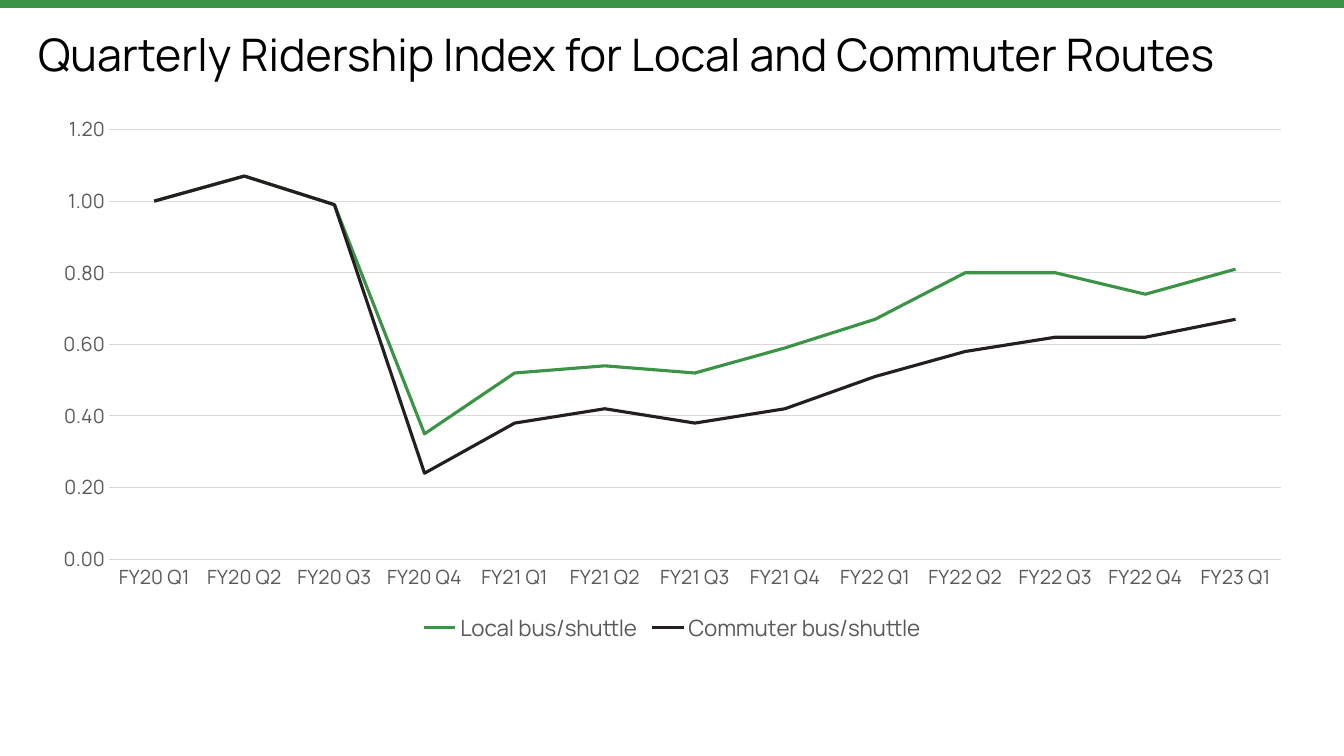
"""Builds a slide with a line chart of quarterly bus ridership."""
import pptx
import pptx.chart.data
import pptx.dml.color
import pptx.enum.chart
import pptx.enum.shapes
import pptx.enum.text
import pptx.util

TITLE = "Quarterly Ridership Index for Local and Commuter Routes"
GREEN = pptx.dml.color.RGBColor(0x3B, 0x93, 0x45)
CHARCOAL = pptx.dml.color.RGBColor(0x23, 0x1F, 0x20)
BLACK = pptx.dml.color.RGBColor(0x00, 0x00, 0x00)
GRAY = pptx.dml.color.RGBColor(0x59, 0x59, 0x59)
GRID = pptx.dml.color.RGBColor(0xD9, 0xD9, 0xD9)
FONT = "Manrope"

QUARTERS = [f"FY{20 + i // 4} Q{i % 4 + 1}" for i in range(13)]
RIDERSHIP = [
    ("Local bus/shuttle", GREEN,
     (1, 1.07, 0.99, 0.35, 0.52, 0.54, 0.52, 0.59, 0.67, 0.8, 0.8, 0.74, 0.81)),
    ("Commuter bus/shuttle", CHARCOAL,
     (1, 1.07, 0.99, 0.24, 0.38, 0.42, 0.38, 0.42, 0.51, 0.58, 0.62, 0.62, 0.67)),
]

PAGE_SIZE = (1344, 756)
BAND_BOX = (0, 0, 1344, 8)
TITLE_BOX = (38, 33, 1268, 48)
CHART_BOX = (38, 105, 1268, 542)
EMU_PER_PX = 914400 / 100.8


def emu(lengths):
    return [pptx.util.Emu(round(length * EMU_PER_PX)) for length in lengths]


def style_font(font, size, color):
    font.name = FONT
    font.size = pptx.util.Pt(size)
    font.color.rgb = color


def style_line(line, color, width):
    line.color.rgb = color
    line.width = pptx.util.Pt(width)


def add_band(page):
    band = page.shapes.add_shape(pptx.enum.shapes.MSO_SHAPE.RECTANGLE, *emu(BAND_BOX))
    band.shadow.inherit = False
    band.fill.solid()
    band.fill.fore_color.rgb = GREEN
    band.line.fill.background()


def fill_title(page):
    title = page.shapes.title
    title.left, title.top, title.width, title.height = emu(TITLE_BOX)
    frame = title.text_frame
    frame.margin_left = frame.margin_top = frame.margin_right = frame.margin_bottom = 0
    frame.auto_size = pptx.enum.text.MSO_AUTO_SIZE.SHAPE_TO_FIT_TEXT
    frame.text = TITLE
    para = frame.paragraphs[0]
    para.alignment = pptx.enum.text.PP_ALIGN.LEFT
    para.line_spacing = 0.9
    style_font(para.font, 32, BLACK)


def add_ridership_chart(page):
    data = pptx.chart.data.CategoryChartData()
    data.categories = QUARTERS
    for name, _, values in RIDERSHIP:
        data.add_series(name, values)
    chart = page.shapes.add_chart(
        pptx.enum.chart.XL_CHART_TYPE.LINE, *emu(CHART_BOX), data).chart
    style_font(chart.font, 10, BLACK)
    chart.has_title = False
    chart.has_legend = True
    chart.legend.position = pptx.enum.chart.XL_LEGEND_POSITION.BOTTOM
    chart.legend.include_in_layout = False
    style_font(chart.legend.font, 16, GRAY)

    for axis in (chart.category_axis, chart.value_axis):
        axis.major_tick_mark = pptx.enum.chart.XL_TICK_MARK.NONE
        axis.minor_tick_mark = pptx.enum.chart.XL_TICK_MARK.NONE
        style_font(axis.tick_labels.font, 14, GRAY)
    style_line(chart.category_axis.format.line, GRID, 0.75)
    scale = chart.value_axis
    scale.minimum_scale, scale.maximum_scale, scale.major_unit = 0, 1.2, 0.2
    scale.tick_labels.number_format = "#,##0.00"
    scale.tick_labels.number_format_is_linked = False
    scale.format.line.fill.background()
    style_line(scale.major_gridlines.format.line, GRID, 0.75)

    chart.plots[0].vary_by_categories = False
    for series, (_, color, _) in zip(chart.plots[0].series, RIDERSHIP):
        series.smooth = False
        series.marker.style = pptx.enum.chart.XL_MARKER_STYLE.NONE
        style_line(series.format.line, color, 2.25)


def main():
    deck = pptx.Presentation()
    deck.slide_width, deck.slide_height = emu(PAGE_SIZE)
    page = deck.slides.add_slide(deck.slide_layouts.get_by_name("Title Only"))
    add_band(page)
    fill_title(page)
    add_ridership_chart(page)
    deck.save("out.pptx")


if __name__ == "__main__":
    main()
